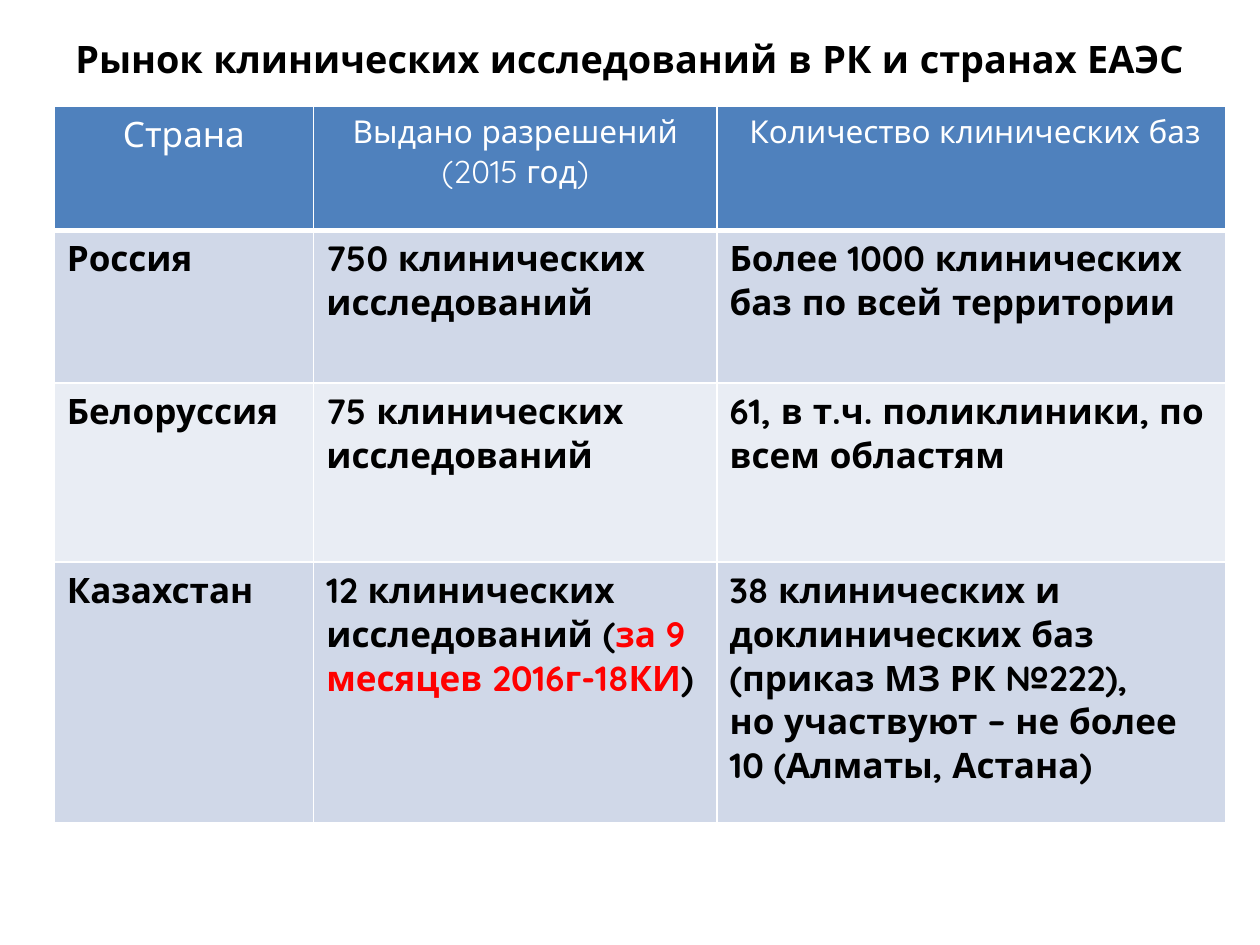
from lxml.etree import SubElement
from pptx import Presentation
from pptx.dml.color import RGBColor
from pptx.enum.text import MSO_ANCHOR, PP_ALIGN
from pptx.oxml.ns import qn
from pptx.util import Inches, Pt

FONT = "Quicksand"
BLACK = RGBColor(0x00, 0x00, 0x00)
WHITE = RGBColor(0xFF, 0xFF, 0xFF)
RED = RGBColor(0xFF, 0x00, 0x00)
HEADER_BLUE = RGBColor(0x4F, 0x81, 0xBD)
BAND_DARK = RGBColor(0xD0, 0xD8, 0xE8)
BAND_LIGHT = RGBColor(0xE9, 0xED, 0xF4)


def add_run(paragraph, text, size, color, bold):
    run = paragraph.add_run()
    run.text = text
    run.font.name = FONT
    run.font.size = Pt(size)
    run.font.bold = bold
    run.font.color.rgb = color


def set_cell(cell, fill, bottom_width):
    """Fill the cell and draw white borders; the bottom one may be thicker."""
    properties = cell._tc.get_or_add_tcPr()
    for side, width in (("L", 1), ("R", 1), ("T", 1), ("B", bottom_width)):
        line = SubElement(properties, qn(f"a:ln{side}"), w=str(Pt(width)))
        solid = SubElement(line, qn("a:solidFill"))
        SubElement(solid, qn("a:srgbClr"), val=str(WHITE))
    cell.fill.solid()
    cell.fill.fore_color.rgb = fill


presentation = Presentation()
presentation.slide_width = Inches(10)
presentation.slide_height = Inches(7.5)
slide = presentation.slides.add_slide(presentation.slide_layouts[6])

# Title
title = slide.shapes.add_textbox(Inches(0.5), Inches(0.12), Inches(9), Inches(0.69))
title_frame = title.text_frame
title_frame.word_wrap = True
title_frame.vertical_anchor = MSO_ANCHOR.MIDDLE
title_paragraph = title_frame.paragraphs[0]
title_paragraph.alignment = PP_ALIGN.CENTER
add_run(title_paragraph, "Рынок клинических исследований в РК и странах ЕАЭС", 21.6, BLACK, True)

# Table
column_widths = [2.06, 3.2, 4.04]
row_heights = [0.99, 1.21, 1.42, 2.07]
table = slide.shapes.add_table(
    len(row_heights), len(column_widths), Inches(0.43), Inches(0.84),
    Inches(sum(column_widths)), Inches(sum(row_heights)),
).table
for column, width in zip(table.columns, column_widths):
    column.width = Inches(width)
for row, height in zip(table.rows, row_heights):
    row.height = Inches(height)

# Header row: runs of (text, size)
headers = [
    [("Страна", 20)],
    [("Выдано разрешений (2015 год)", 18)],
    [(" ", 16), ("Количество клинических баз", 18)],
]
for column_index, runs in enumerate(headers):
    cell = table.cell(0, column_index)
    set_cell(cell, HEADER_BLUE, 3)
    paragraph = cell.text_frame.paragraphs[0]
    paragraph.alignment = PP_ALIGN.CENTER
    for text, size in runs:
        add_run(paragraph, text, size, WHITE, False)

# Body rows: each cell is a list of paragraphs, each paragraph a list of (text, color)
countries = [
    [
        [[("Россия", BLACK)]],
        [[("750 клинических исследований", BLACK)]],
        [[("Более 1000 клинических баз по всей территории", BLACK)]],
    ],
    [
        [[("Белоруссия", BLACK)]],
        [[("75 клинических исследований", BLACK)]],
        [[("61, в т.ч. поликлиники, по всем областям", BLACK)]],
    ],
    [
        [[("Казахстан", BLACK)]],
        [[("12 клинических исследований (", BLACK), ("за 9 месяцев 2016г-18КИ", RED), (")", BLACK)]],
        [
            [("38 клинических и доклинических баз (приказ МЗ РК №222),", BLACK)],
            [("но участвуют – не более 10 (Алматы, Астана)", BLACK)],
        ],
    ],
]
for row_index, country in enumerate(countries, start=1):
    band = BAND_DARK if row_index % 2 else BAND_LIGHT
    for column_index, paragraphs in enumerate(country):
        cell = table.cell(row_index, column_index)
        set_cell(cell, band, 1)
        frame = cell.text_frame
        for index, runs in enumerate(paragraphs):
            paragraph = frame.add_paragraph() if index else frame.paragraphs[0]
            for text, color in runs:
                add_run(paragraph, text, 20, color, True)

presentation.save("out.pptx")
